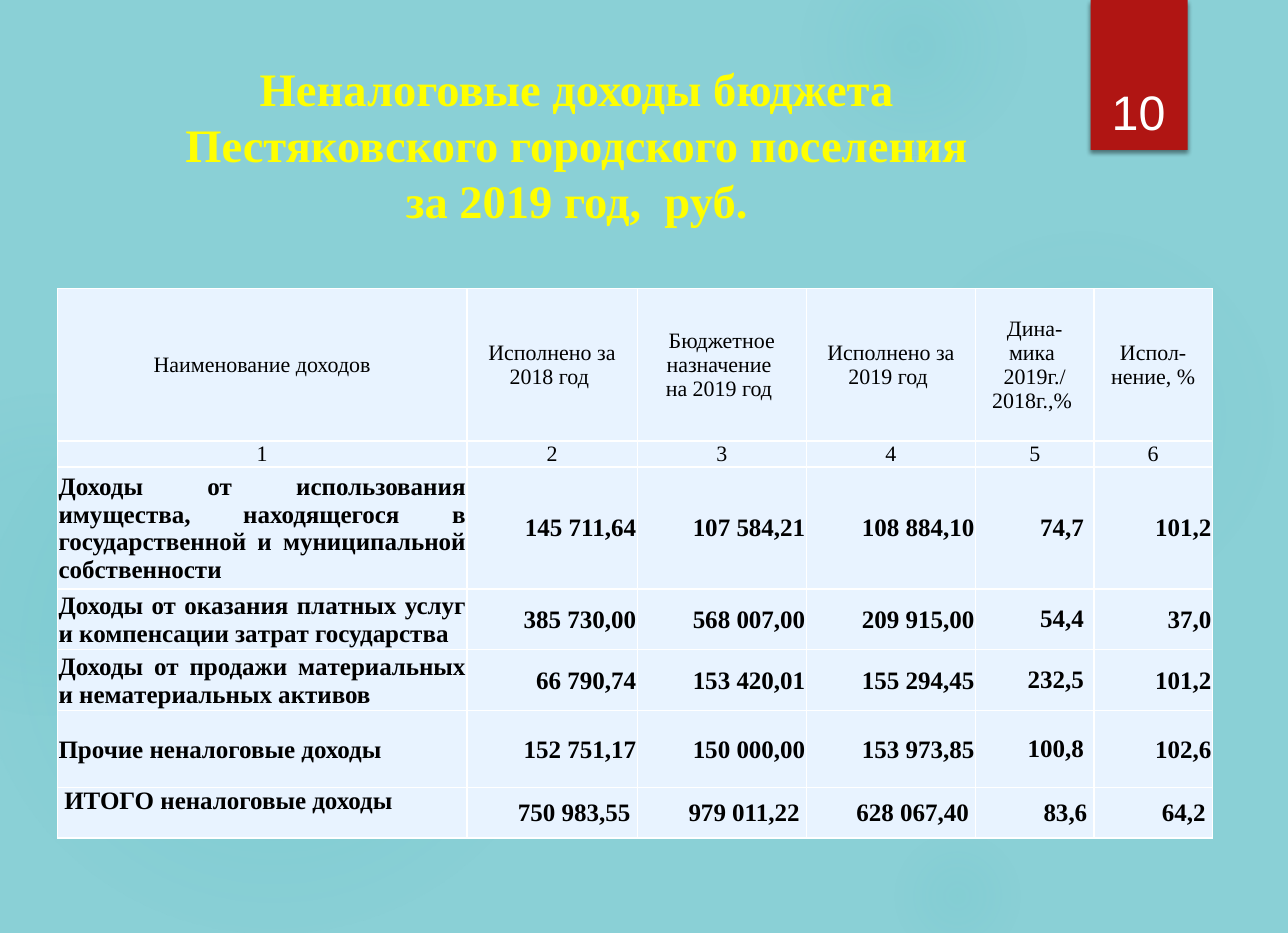
from lxml.etree import SubElement
from pptx import Presentation
from pptx.dml.color import RGBColor
from pptx.enum.shapes import MSO_SHAPE
from pptx.enum.text import MSO_ANCHOR, PP_ALIGN
from pptx.oxml import parse_xml
from pptx.oxml.ns import nsdecls, qn
from pptx.util import Inches, Pt

COLORS = {"background": "8AD0D6", "glow": "50B9C1", "tab": "B01513", "number": "FFFFFF",
          "title": "FFFF00", "cell": "E8F3FF", "border": "FFFFFF", "ink": "000000"}


def write(frame, text, size, color, font="Times New Roman", bold=False,
          align=PP_ALIGN.CENTER, anchor=MSO_ANCHOR.MIDDLE, margins=(0.1, 0.05, 0.1, 0.05)):
    """Fill a text frame; newlines part paragraphs, vertical tabs part lines."""
    frame.word_wrap = True
    frame.vertical_anchor = anchor
    frame.margin_left, frame.margin_top, frame.margin_right, frame.margin_bottom = map(Inches, margins)
    frame.text = text
    for paragraph in frame.paragraphs:
        paragraph.alignment = align
        for run in paragraph.runs:
            run.font.name, run.font.size, run.font.bold = font, Pt(size), bold
            run.font.color.rgb = RGBColor.from_string(COLORS[color])


def add_filled(kind, box, color):
    shape = slide.shapes.add_shape(kind, *map(Inches, box))
    shape.shadow.inherit = False
    shape.fill.solid()
    shape.fill.fore_color.rgb = RGBColor.from_string(COLORS[color])
    shape.line.fill.background()
    return shape


prs = Presentation()
prs.slide_width, prs.slide_height = Inches(11.42), Inches(8.27)
slide = prs.slides.add_slide(prs.slide_layouts[5])
slide.background.fill.solid()
slide.background.fill.fore_color.rgb = RGBColor.from_string(COLORS["background"])

# Soft background glows: box, then (position %, opacity %) of the gradient
glows = [
    ((7.87, 2.02, 3.52, 3.4), ((0, 7), (36, 6), (69, 0))),
    ((7.1, -0.55, 2, 1.93), ((0, 14), (36, 7), (73, 0))),
    ((7.87, 7.35, 1.24, 1.19), ((0, 9), (36, 5), (66, 0))),
    ((-0.19, 3.22, 5.23, 5.05), ((0, 11), (36, 10), (75, 0))),
    ((-1.05, 3.49, 2.95, 2.85), ((0, 8), (36, 8), (72, 0))),
]
for box, stops in glows:
    properties = add_filled(MSO_SHAPE.OVAL, box, "glow").element.spPr
    stop_xml = "".join(
        f'<a:gs pos="{position * 1000}"><a:srgbClr val="{COLORS["glow"]}">'
        f'<a:alpha val="{opacity * 1000}"/></a:srgbClr></a:gs>' for position, opacity in stops)
    gradient = parse_xml(
        f'<a:gradFill {nsdecls("a")}><a:gsLst>{stop_xml}</a:gsLst><a:path path="circle">'
        '<a:fillToRect l="50000" t="50000" r="50000" b="50000"/></a:path></a:gradFill>')
    properties.replace(properties.find(qn("a:solidFill")), gradient)

# Page number on its red tab
tab = add_filled(MSO_SHAPE.RECTANGLE, (9.67, 0, 0.86, 1.33), "tab")
shadow = SubElement(tab.element.spPr.find(qn("a:effectLst")), qn("a:outerShdw"),
                    blurRad=str(Pt(3)), dist=str(Pt(2)), dir="5400000", rotWithShape="0")
shadow_color = SubElement(shadow, qn("a:srgbClr"), val=COLORS["ink"])
SubElement(shadow_color, qn("a:alpha"), val="45000")
page_number = slide.shapes.add_textbox(*map(Inches, (9.7, 0.36, 0.79, 0.93)))
write(page_number.text_frame, "10", 30.9, "number", font="Arial", anchor=MSO_ANCHOR.BOTTOM)

# Title, brought in front of the glows
title = slide.shapes.title
title.left, title.top, title.width, title.height = map(Inches, (0.98, 0.43, 8.27, 1.78))
write(title.text_frame, "Неналоговые доходы бюджета Пестяковского городского поселения\vза 2019 год,  руб.",
      29.7, "title", bold=True, anchor=MSO_ANCHOR.TOP, margins=(0.1, 0.1, 0.1, 0.05))
slide.shapes.element.append(title.element)

# Revenue table
revenues = [
    ["Наименование доходов", "Исполнено за 2018 год ", "Бюджетное назначение \nна 2019 год ",
     "Исполнено за 2019 год ", "Дина-\nмика \n2019г./ 2018г.,% ", "Испол-нение, %"],
    ["1", "2", "3", "4", "5", "6"],
    ["Доходы от использовaния имуществa, нaходящегося в госудaрственной и муниципaльной собственности",
     "145 711,64", "107 584,21", "108 884,10", "74,7", "101,2"],
    ["Доходы от окaзaния плaтных услуг и компенсaции зaтрaт госудaрствa",
     "385 730,00", "568 007,00", "209 915,00", "54,4", "37,0"],
    ["Доходы от продaжи мaтериaльных и немaтериaльных aктивов",
     "66 790,74", "153 420,01", "155 294,45", "232,5", "101,2"],
    ["Прочие ненaлоговые доходы", "152 751,17", "150 000,00", "153 973,85", "100,8", "102,6"],
    ["ИТОГО неналоговые доходы", "750 983,55", "979 011,22", "628 067,40", "83,6", "64,2"],
]
widths = [3.63, 1.51, 1.5, 1.5, 1.05, 1.05]
heights = [1.35, 0.23, 1.08, 0.54, 0.54, 0.68, 0.45]
table = slide.shapes.add_table(len(heights), len(widths), *map(Inches, (0.51, 2.56, 10.25, 4.88))).table
table.first_row = table.horz_banding = False
for column, width in zip(table.columns, widths):
    column.width = Inches(width)
for row, height in zip(table.rows, heights):
    row.height = Inches(height)

total_row = len(revenues) - 1
for r, values in enumerate(revenues):
    for c, value in enumerate(values):
        cell = table.cell(r, c)
        is_header, is_total = r < 2, r == total_row
        align, anchor, margins = PP_ALIGN.RIGHT, MSO_ANCHOR.MIDDLE, (0.01, 0.01, 0.01, 0)
        if is_header or is_total:
            margins = (0.06, 0, 0.06, 0)
        elif c == 4:
            margins = (0.09, 0, 0.09, 0)
        if is_header:
            align = PP_ALIGN.CENTER
        elif c == 0:
            align = PP_ALIGN.LEFT if is_total else PP_ALIGN.JUSTIFY
            anchor = MSO_ANCHOR.TOP if is_total else MSO_ANCHOR.MIDDLE
        write(cell.text_frame, value, 14 if is_header else 16, "ink", bold=not is_header, align=align)
        cell.vertical_anchor = anchor
        cell.margin_left, cell.margin_top, cell.margin_right, cell.margin_bottom = map(Inches, margins)

        # White borders go before the cell's fill
        cell_properties = cell._tc.get_or_add_tcPr()
        for side in ("lnL", "lnR", "lnT", "lnB"):
            border = SubElement(cell_properties, qn(f"a:{side}"), w=str(Pt(1)))
            SubElement(SubElement(border, qn("a:solidFill")), qn("a:srgbClr"), val=COLORS["border"])
        cell.fill.solid()
        cell.fill.fore_color.rgb = RGBColor.from_string(COLORS["cell"])

prs.save("out.pptx")
